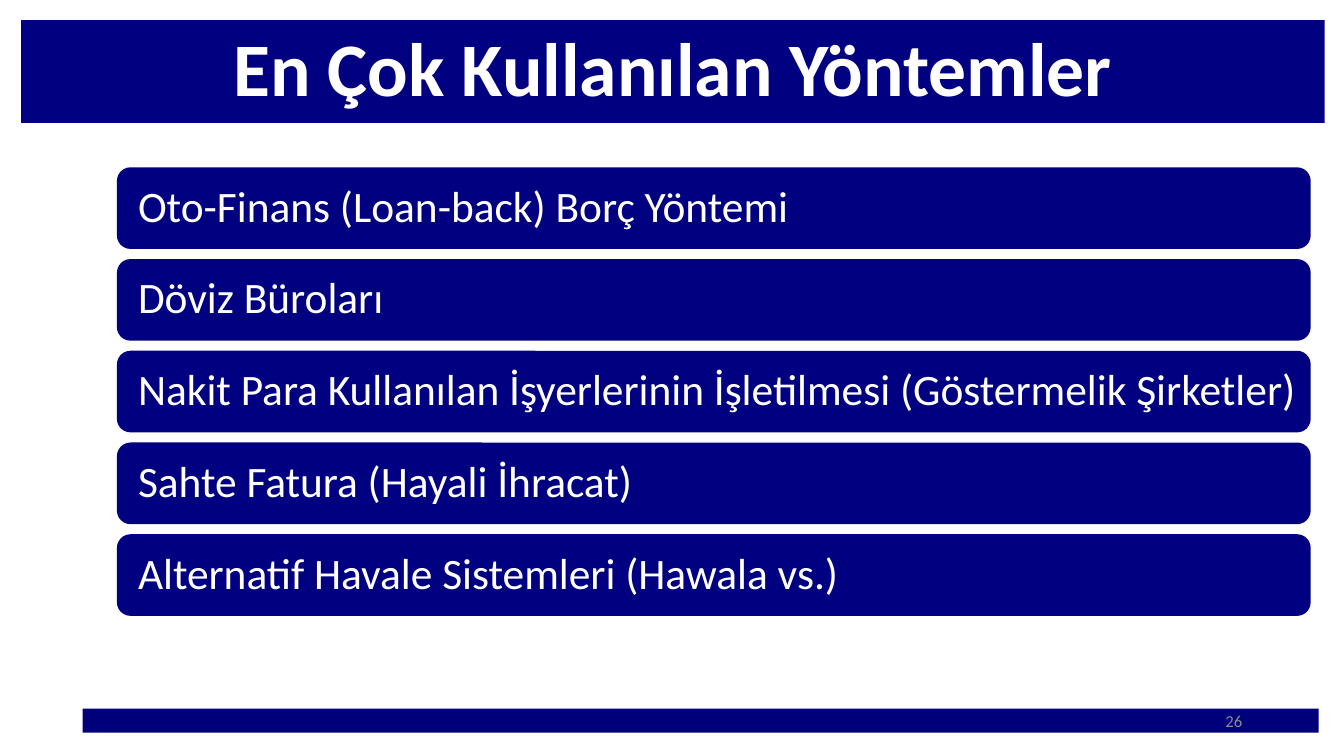
from pptx import Presentation
from pptx.dml.color import RGBColor
from pptx.enum import shapes, text
from pptx.util import Inches, Pt

NAVY = RGBColor(0x00, 0x00, 0x80)
FOOTER_NAVY = RGBColor(0x00, 0x00, 0x7B)
WHITE = RGBColor(0xFF, 0xFF, 0xFF)
GREY = RGBColor(0x8C, 0x8C, 0x8C)
FONT = "Calibri"

METHODS = [
    "Oto-Finans (Loan-back) Borç Yöntemi",
    "Döviz Büroları",
    "Nakit Para Kullanılan İşyerlerinin İşletilmesi (Göstermelik Şirketler)",
    "Sahte Fatura (Hayali İhracat)",
    "Alternatif Havale Sistemleri (Hawala vs.)",
]


def add_block(s, kind, box, fill):
    sp = s.shapes.add_shape(kind, *map(Inches, box))
    sp.shadow.inherit = False
    sp.fill.solid()
    sp.fill.fore_color.rgb = fill
    sp.line.fill.background()
    return sp


def write(sp, words, size, color, align, bold=False, spacing=1.0):
    """Put one vertically centred line of text into a shape."""
    tf = sp.text_frame
    tf.word_wrap = True
    tf.vertical_anchor = text.MSO_ANCHOR.MIDDLE
    p = tf.paragraphs[0]
    p.alignment = align
    p.line_spacing = spacing
    r = p.add_run()
    r.text = words
    r.font.name = FONT
    r.font.size = Pt(size)
    r.font.bold = bold
    r.font.color.rgb = color


def add_title(s, box, words):
    sp = add_block(s, shapes.MSO_SHAPE.RECTANGLE, box, NAVY)
    write(sp, words, 54, WHITE, text.PP_ALIGN.CENTER, bold=True, spacing=0.9)


def add_method_list(s, box, methods, gap=0.1):
    """Stack equal rounded bars that fill the box."""
    left, top, width, height = box
    pitch = (height + gap) / len(methods)
    for row, method in enumerate(methods):
        bar = (left, top + row * pitch, width, pitch - gap)
        sp = add_block(s, shapes.MSO_SHAPE.ROUNDED_RECTANGLE, bar, NAVY)
        sp.text_frame.margin_left = Inches(0.17)
        sp.text_frame.margin_right = Inches(0.1)
        write(sp, method, 31, WHITE, text.PP_ALIGN.LEFT, spacing=0.9)


def add_footer(s, box, number):
    """Draw the footer band with the page number near its right end."""
    left, top, width, height = box
    add_block(s, shapes.MSO_SHAPE.RECTANGLE, box, FOOTER_NAVY)
    number_box = (left + width - 3.66, top - 0.08, 3, height + 0.16)
    sp = s.shapes.add_textbox(*map(Inches, number_box))
    write(sp, number, 12, GREY, text.PP_ALIGN.RIGHT)


def main():
    prs = Presentation()
    prs.slide_width = Inches(13.33)
    prs.slide_height = Inches(7.5)
    s = prs.slides.add_slide(prs.slide_layouts[6])
    add_footer(s, (0.82, 7.03, 12.26, 0.24), "26")
    add_method_list(s, (1.16, 1.66, 11.84, 4.45), METHODS)
    add_title(s, (0.21, 0.2, 12.93, 1.02), "En Çok Kullanılan Yöntemler")
    prs.save("out.pptx")


if __name__ == "__main__":
    main()
